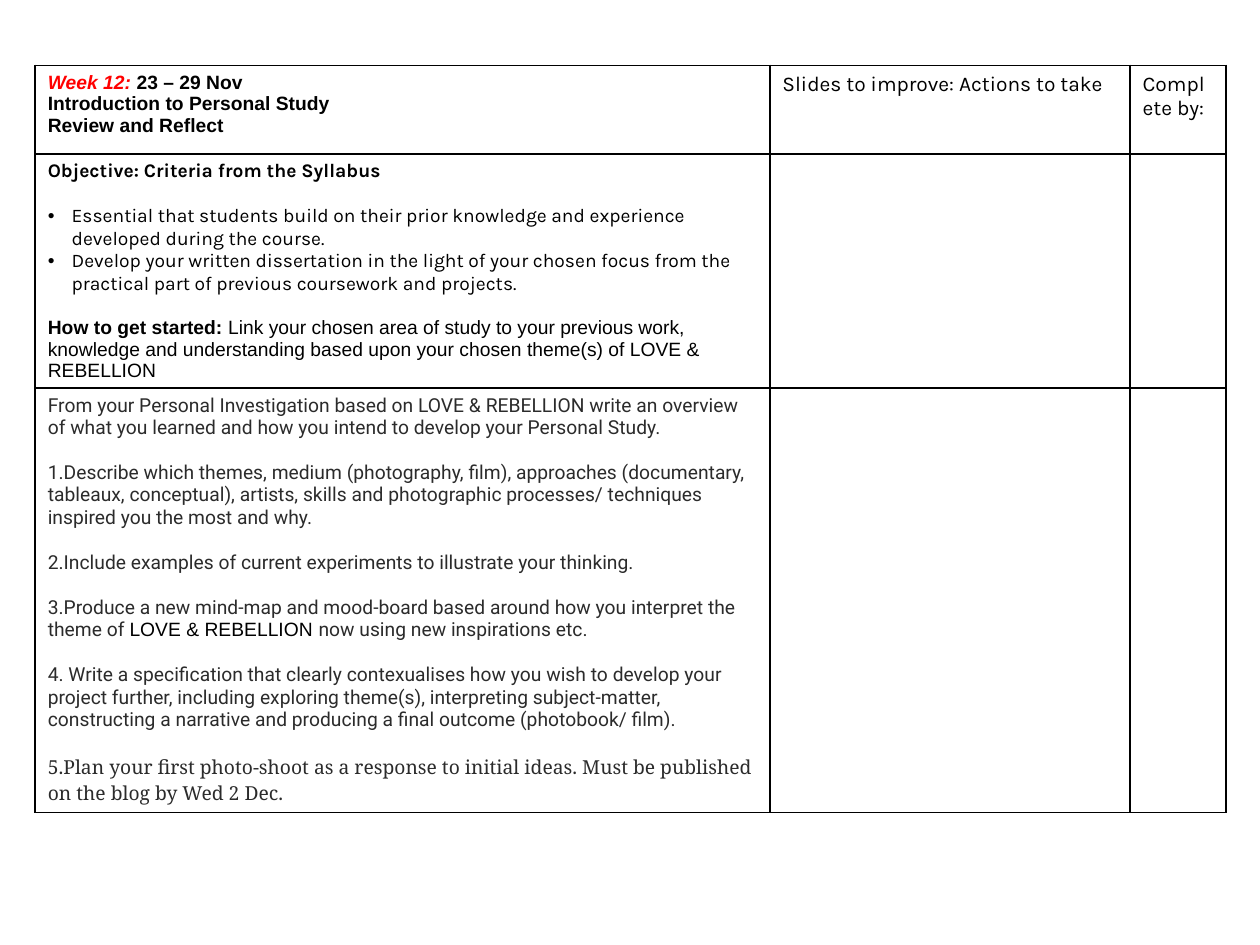
"""Build the weekly planner slide for the personal study."""
from dataclasses import dataclass
from enum import Enum

from lxml.etree import SubElement
from pptx import Presentation
from pptx.dml.color import RGBColor
from pptx.oxml.ns import qn
from pptx.table import _Cell as Cell
from pptx.text.text import _Paragraph as TextParagraph
from pptx.util import Cm, Pt

COLORS = {"black": "000000", "red": "FF0000", "body": "2B2B2B"}
COLUMN_WIDTHS = (14.81, 7.26, 1.93)
ROW_HEIGHTS = (1.78, 4.72, 8.55)
BULLET_INDENT = Cm(0.48)
BLANK_LINE = 12.8


class Marker(Enum):
    NONE = 0
    DOT = 1
    NUMBER = 2


@dataclass(frozen=True)
class Span:
    text: str
    font: str = "Arial"
    color: str = "black"
    bold: bool = False
    italic: bool = False
    size: float = 11


@dataclass(frozen=True)
class Block:
    spans: tuple[Span, ...]
    marker: Marker = Marker.NONE
    space_after: float = 0


def roboto(text: str) -> Span:
    return Span(text, "Roboto", "body")


def task(*spans: Span, space_after: float = BLANK_LINE) -> Block:
    return Block(spans, Marker.NUMBER, space_after)


def criterion(text: str, space_after: float = 0) -> Block:
    return Block((Span(text, "Karla"),), Marker.DOT, space_after)


def heading(text: str) -> Block:
    return Block((Span(text, "Karla", size=12),))


WEEK = (
    Block((Span("Week 12: ", color="red", bold=True, italic=True),
           Span("23 – 29 Nov", bold=True))),
    Block((Span("Introduction to Personal Study", bold=True),)),
    Block((Span("Review and Reflect", bold=True),)),
)
OBJECTIVE = (
    Block((Span("Objective: Criteria from the Syllabus", "Karla", bold=True),),
          space_after=BLANK_LINE),
    criterion("Essential that students build on their prior knowledge and "
              "experience developed during the course."),
    criterion("Develop your written dissertation in the light of your chosen focus "
              "from the practical part of previous coursework and projects.", BLANK_LINE),
    Block((Span("How to get started: ", bold=True),
           Span("Link your chosen area of study to your previous work, knowledge and "
                "understanding based upon your chosen theme(s) of LOVE & REBELLION"))),
)
TASKS = (
    Block((roboto("From your Personal Investigation based on LOVE & REBELLION write an "
                  "overview of what you learned and how you intend to develop your "
                  "Personal Study."),), space_after=BLANK_LINE),
    task(roboto("Describe which themes, medium (photography, film), approaches "
                "(documentary, tableaux, conceptual), artists, skills and photographic "
                "processes/ techniques inspired you the most and why.")),
    task(roboto("Include examples of current experiments to illustrate your thinking.")),
    task(roboto("Produce a new mind-map and mood-board based around how you interpret "
                "the theme of "),
         Span("LOVE & REBELLION "),
         roboto("now using new inspirations etc.")),
    task(roboto(" Write a specification that clearly contexualises how you wish to "
                "develop your project further, including exploring theme(s), "
                "interpreting subject-matter, constructing a narrative and producing a "
                "final outcome (photobook/ film).")),
    task(Span("Plan your first photo-shoot as a response to initial ideas. Must be "
              "published on the blog by Wed 2 Dec.", "Noto Serif", "body"),
         space_after=0),
)
ROWS = (
    (WEEK, (heading("Slides to improve: Actions to take"),), (heading("Complete by:"),)),
    (OBJECTIVE, (), ()),
    (TASKS, (), ()),
)


def add_marker(paragraph: TextParagraph, marker: Marker) -> None:
    properties = paragraph._p.get_or_add_pPr()
    if marker is Marker.DOT:
        properties.set("marL", str(BULLET_INDENT))
        properties.set("indent", str(-BULLET_INDENT))
        SubElement(properties, qn("a:buFont"), typeface="Arial")
        SubElement(properties, qn("a:buChar"), char="•")
    elif marker is Marker.NUMBER:
        properties.set("marL", "0")
        properties.set("indent", "0")
        SubElement(properties, qn("a:buAutoNum"), type="arabicPeriod")


def write_block(paragraph: TextParagraph, block: Block) -> None:
    paragraph.space_after = Pt(block.space_after)
    add_marker(paragraph, block.marker)
    for span in block.spans:
        run = paragraph.add_run()
        run.text = span.text
        font = run.font
        font.name, font.size = span.font, Pt(span.size)
        font.bold, font.italic = span.bold, span.italic
        font.color.rgb = RGBColor.from_string(COLORS[span.color])


def style_cell(cell: Cell) -> None:
    properties = cell._tc.get_or_add_tcPr()
    for side in ("lnL", "lnR", "lnT", "lnB"):
        line = SubElement(properties, qn(f"a:{side}"), w=str(Pt(1)))
        fill = SubElement(line, qn("a:solidFill"))
        SubElement(fill, qn("a:srgbClr"), val=COLORS["black"])
    cell.fill.background()


def fill_cell(cell: Cell, blocks: tuple[Block, ...]) -> None:
    style_cell(cell)
    frame = cell.text_frame
    for index, block in enumerate(blocks):
        paragraph = frame.add_paragraph() if index else frame.paragraphs[0]
        write_block(paragraph, block)


def main() -> None:
    presentation = Presentation()
    presentation.slide_width, presentation.slide_height = Cm(25.4), Cm(19.05)
    slide = presentation.slides.add_slide(presentation.slide_layouts[6])
    table = slide.shapes.add_table(
        len(ROW_HEIGHTS), len(COLUMN_WIDTHS), Cm(0.71), Cm(1.32),
        Cm(sum(COLUMN_WIDTHS)), Cm(sum(ROW_HEIGHTS))).table
    table.first_row = table.horz_banding = False
    for column, width in zip(table.columns, COLUMN_WIDTHS):
        column.width = Cm(width)
    for row, height, contents in zip(table.rows, ROW_HEIGHTS, ROWS):
        row.height = Cm(height)
        for cell, blocks in zip(row.cells, contents):
            fill_cell(cell, blocks)
    presentation.save("out.pptx")


if __name__ == "__main__":
    main()
